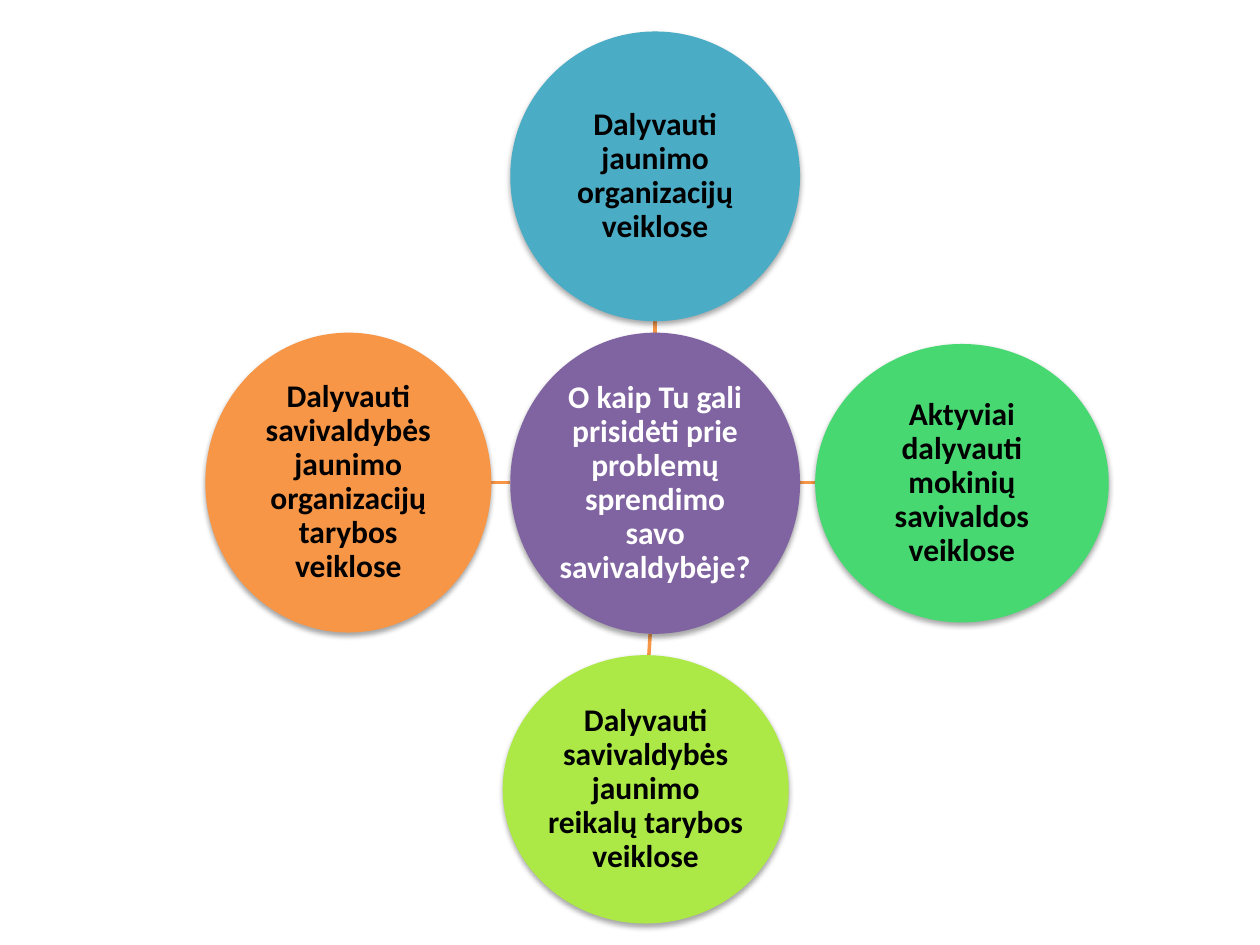
from dataclasses import dataclass

from lxml import etree
from pptx import Presentation
from pptx.dml.color import RGBColor
from pptx.enum.shapes import MSO_CONNECTOR, MSO_SHAPE
from pptx.enum.text import MSO_ANCHOR, PP_ALIGN
from pptx.oxml.ns import qn
from pptx.util import Inches, Pt

OVAL = MSO_SHAPE.OVAL
STRAIGHT = MSO_CONNECTOR.STRAIGHT
MIDDLE = MSO_ANCHOR.MIDDLE
CENTER = PP_ALIGN.CENTER

BLACK = RGBColor(0x00, 0x00, 0x00)
WHITE = RGBColor(0xFF, 0xFF, 0xFF)
PURPLE = RGBColor(0x80, 0x64, 0xA2)
TEAL = RGBColor(0x4B, 0xAC, 0xC6)
GREEN = RGBColor(0x47, 0xD8, 0x72)
LIME = RGBColor(0xAC, 0xE9, 0x46)
ORANGE = RGBColor(0xF7, 0x96, 0x46)


@dataclass(frozen=True)
class Circle:
    text: str
    left: float
    top: float
    width: float
    height: float
    fill: RGBColor
    color: RGBColor = BLACK


@dataclass(frozen=True)
class Spoke:
    x1: float
    y1: float
    x2: float
    y2: float


CIRCLES = [
    Circle("O kaip Tu gali prisidėti prie problemų sprendimo savo savivaldybėje?",
           4.05, 2.64, 2.3, 2.39, PURPLE, WHITE),
    Circle("Dalyvauti jaunimo organizacijų veiklose",
           4.05, 0.25, 2.3, 2.3, TEAL),
    Circle("Aktyviai dalyvauti mokinių savivaldos veiklose",
           6.47, 2.73, 2.33, 2.21, GREEN),
    Circle("Dalyvauti savivaldybės jaunimo reikalų tarybos veiklose",
           3.99, 5.2, 2.27, 2.13, LIME),
    Circle("Dalyvauti savivaldybės jaunimo organizacijų tarybos veiklose",
           1.63, 2.64, 2.27, 2.38, ORANGE),
]

SPOKES = [
    Spoke(5.2, 2.64, 5.2, 2.55),
    Spoke(6.35, 3.83, 6.47, 3.83),
    Spoke(5.16, 5.03, 5.15, 5.2),
    Spoke(4.05, 3.83, 3.9, 3.83),
]


def add_shadow(sp) -> None:
    sp.shadow.inherit = False
    effects = sp._element.spPr.find(qn("a:effectLst"))
    shadow = etree.SubElement(
        effects, qn("a:outerShdw"), blurRad=str(Pt(3.1)), dist=str(Pt(1.8)),
        dir="5400000", rotWithShape="0")
    color = etree.SubElement(shadow, qn("a:srgbClr"), val=str(BLACK))
    etree.SubElement(color, qn("a:alpha"), val="35000")


def draw_spoke(s, spoke: Spoke) -> None:
    line = s.shapes.add_connector(
        STRAIGHT, Inches(spoke.x1), Inches(spoke.y1),
        Inches(spoke.x2), Inches(spoke.y2))
    line.line.color.rgb = ORANGE
    line.line.width = Pt(2)
    etree.SubElement(line._element.spPr, qn("a:effectLst"))


def draw_circle(s, circle: Circle) -> None:
    sp = s.shapes.add_shape(
        OVAL, Inches(circle.left), Inches(circle.top),
        Inches(circle.width), Inches(circle.height))
    sp.fill.solid()
    sp.fill.fore_color.rgb = circle.fill
    sp.line.fill.background()
    add_shadow(sp)
    tf = sp.text_frame
    tf.word_wrap = True
    tf.vertical_anchor = MIDDLE
    tf.margin_left = tf.margin_right = Inches(0.01)
    tf.margin_top = tf.margin_bottom = Inches(0.01)
    p = tf.paragraphs[0]
    p.text = circle.text
    p.alignment = CENTER
    p.line_spacing = 0.9
    p.font.name = "Calibri"
    p.font.size = Pt(18)
    p.font.bold = True
    p.font.color.rgb = circle.color


def main() -> None:
    prs = Presentation()
    prs.slide_width = Inches(10)
    prs.slide_height = Inches(7.5)
    s = prs.slides.add_slide(prs.slide_layouts[6])
    for spoke in SPOKES:
        draw_spoke(s, spoke)
    for circle in CIRCLES:
        draw_circle(s, circle)
    prs.save("out.pptx")


if __name__ == "__main__":
    main()
